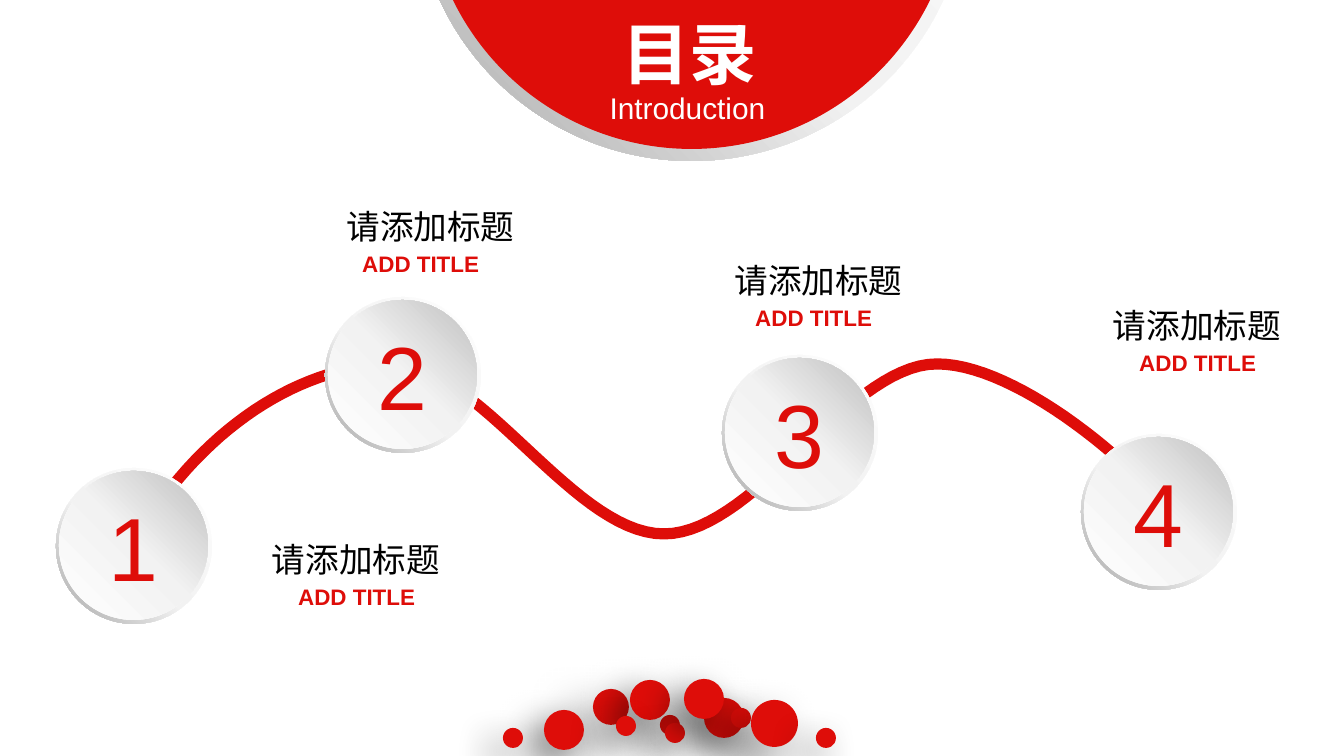
from lxml.etree import SubElement
from pptx import Presentation
from pptx.dml.color import RGBColor
from pptx.enum.shapes import MSO_SHAPE
from pptx.enum.text import MSO_AUTO_SIZE, PP_ALIGN
from pptx.oxml.ns import qn
from pptx.util import Pt

# Content, all lengths in px
WIDTH, HEIGHT = 1344, 756
COLORS = {"red": "DE0D09", "white": "FFFFFF", "black": "000000",
          "pale": "F2F2F2", "silver": "BFBFBF", "gray": "A6A6A6"}
HEADING, SUBHEADING = "目录", "Introduction"
LABEL, SUBLABEL = "请添加标题", "ADD TITLE"
# number, badge corner, label (left, top, width), sublabel left
STEPS = [
    ("1", (56, 468), (237, 532, 238), 285),
    ("2", (325, 297), (296, 199, 269), 349),
    ("3", (722, 355), (683, 253, 271), 742),
    ("4", (1081, 434), (1064, 298, 266), 1126),
]
CURVE_START = (134, 542)
CURVE = [  # two control points and an end point for each bend
    ((203, 425), (302, 366), (391, 364)),
    ((480, 363), (573, 534), (664, 534)),
    ((754, 534), (849, 364), (937, 364)),
    ((1024, 364), (1160, 485), (1185, 535)),
]
DOTS = [  # left, top, diameter, shadow
    (704, 698, 40, "tight"), (660, 715, 20, "tight"), (731, 708, 20, "tight"),
    (593, 689, 36, "wide"), (630, 680, 40, "tight"), (665, 723, 20, "tight"),
    (751, 700, 47, "wide"), (544, 710, 40, "tight"), (503, 728, 20, "tight"),
    (684, 679, 40, "tight"), (616, 716, 20, "tight"), (816, 728, 20, "tight"),
]
SHADOWS = {  # opacity %, blur pt, distance pt
    "tight": (60, 20, 10),
    "wide": (50, 25, 15),
}
RING = ([(0, "white"), (55, "pale"), (100, "gray")], 225)
DISC = ([(0, "white"), (51, "pale"), (100, "silver")], 45)
STYLES = {
    "label": {"size": Pt(18), "name": "Noto Sans CJK SC", "color": "black"},
    "sublabel": {"size": Pt(12), "name": "Arial", "color": "red", "bold": True},
    "number": {"size": Pt(48), "name": "Arial", "color": "red"},
    "heading": {"size": Pt(36), "name": "Arial", "color": "white", "bold": True},
    "subheading": {"size": Pt(16), "name": "Arial", "color": "white"},
}
CURVE_STEPS = 30


def px(*values):
    return [round(value * 9144000 / WIDTH) for value in values]


def rgb(name):
    return RGBColor.from_string(COLORS[name])


def add_text(shapes, text, style, box, centered=True, wrap=True):
    frame = shapes.add_textbox(*px(*box)).text_frame
    frame.word_wrap = wrap
    frame.auto_size = MSO_AUTO_SIZE.SHAPE_TO_FIT_TEXT
    paragraph = frame.paragraphs[0]
    paragraph.alignment = PP_ALIGN.CENTER if centered else PP_ALIGN.LEFT
    run = paragraph.add_run()
    run.text = text
    for key, value in STYLES[style].items():
        if key == "color":
            run.font.color.rgb = rgb(value)
        else:
            setattr(run.font, key, value)
    if style == "label":
        SubElement(run.font._element, qn("a:ea"), typeface=STYLES[style]["name"])
    return frame


def add_round(shapes, kind, left, top, size):
    shape = shapes.add_shape(kind, *px(left, top, size, size))
    shape.shadow.inherit = False
    shape.line.fill.background()
    return shape


def fill_red(shape):
    shape.fill.solid()
    shape.fill.fore_color.rgb = rgb("red")


def fill_gradient(shape, stops, angle):
    shape.fill.gradient()
    shape.fill.gradient_angle = angle
    stop_list = shape._element.spPr.find(qn("a:gradFill")).find(qn("a:gsLst"))
    for old in list(stop_list):
        stop_list.remove(old)
    for position, color in stops:
        stop = SubElement(stop_list, qn("a:gs"), pos=str(position * 1000))
        SubElement(stop, qn("a:srgbClr"), val=COLORS[color])


def add_ring(shapes, left, top, size):
    ring = add_round(shapes, MSO_SHAPE.DONUT, left, top, size)
    ring.adjustments[0] = 0.05
    fill_gradient(ring, *RING)


def add_shadow(shape, opacity, blur, distance):
    effects = shape._element.spPr.find(qn("a:effectLst"))
    shadow = SubElement(effects, qn("a:outerShdw"), blurRad=str(Pt(blur)),
                        dist=str(Pt(distance)), dir=str(135 * 60000),
                        algn="tr", rotWithShape="0")
    color = SubElement(shadow, qn("a:srgbClr"), val=COLORS["black"])
    SubElement(color, qn("a:alpha"), val=str(opacity * 1000))


def curve_points():
    start = CURVE_START
    for first, second, end in CURVE:
        for step in range(1, CURVE_STEPS + 1):
            t = step / CURVE_STEPS
            u = 1 - t
            yield px(*(u**3 * a + 3 * u * u * t * b + 3 * u * t * t * c + t**3 * d
                       for a, b, c, d in zip(start, first, second, end)))
        start = end


presentation = Presentation()
presentation.slide_width, presentation.slide_height = px(WIDTH, HEIGHT)
slide = presentation.slides.add_slide(presentation.slide_layouts[6])
shapes = slide.shapes

# Winding path behind the steps
builder = shapes.build_freeform(*px(*CURVE_START))
builder.add_line_segments(list(curve_points()), close=False)
winding = builder.convert_to_shape()
winding.shadow.inherit = False
winding.fill.background()
winding.line.color.rgb = rgb("red")
winding.line.width = Pt(6)

# Numbered badges with their labels
for number, (left, top), (label_left, label_top, label_width), sub_left in STEPS:
    badge = shapes.add_group_shape().shapes
    add_ring(badge, left, top, 156)
    disc = add_round(badge, MSO_SHAPE.OVAL, left + 3, top + 3, 149)
    fill_gradient(disc, *DISC)
    add_text(badge, number, "number", (left + 39, top + 17, 78, 122),
             centered=False, wrap=False)
    add_text(shapes, LABEL, "label", (label_left, label_top, label_width, 54))
    add_text(shapes, SUBLABEL, "sublabel", (sub_left, label_top + 45, 144, 40),
             centered=False, wrap=False)

# Heading dome
dome = shapes.add_group_shape().shapes
add_ring(dome, 414, -394, 555)
fill_red(add_round(dome, MSO_SHAPE.OVAL, 426, -382, 531))
heading = add_text(shapes, HEADING, "heading", (560, 23, 259, 77))
heading.paragraphs[0].line_spacing = 0.8
heading.margin_left, heading.margin_right = px(9, 9)
heading.margin_top, heading.margin_bottom = px(5, 5)
add_text(shapes, SUBHEADING, "subheading", (566, 83, 243, 50))

# Dots along the bottom edge
for left, top, diameter, shadow in DOTS:
    dot = add_round(shapes, MSO_SHAPE.OVAL, left, top, diameter)
    fill_red(dot)
    add_shadow(dot, *SHADOWS[shadow])

presentation.save("out.pptx")
